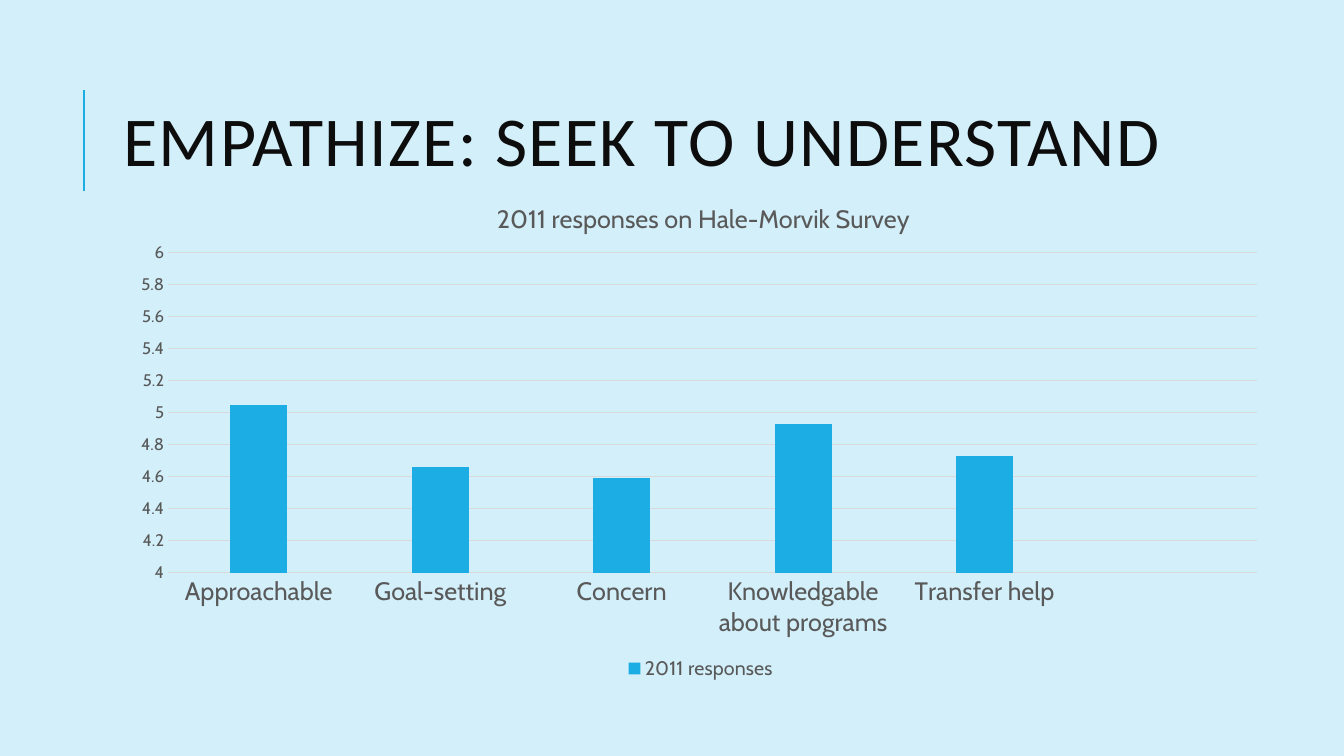
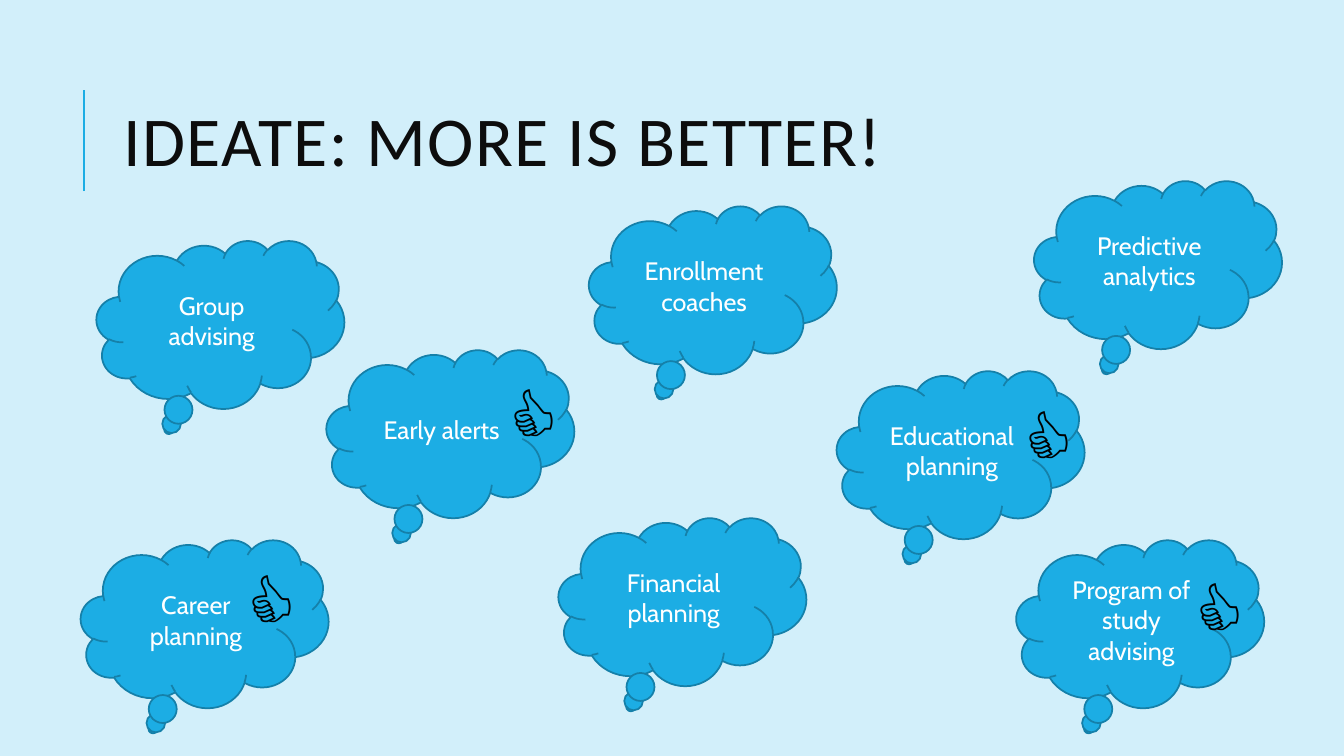
from lxml import etree
from pptx import Presentation
from pptx import util as u
from pptx.chart.data import CategoryChartData
from pptx.dml.color import RGBColor
from pptx.enum import chart as charts, shapes, text
from pptx.oxml import ns

PX = 9525
COLORS = {
    "background": "D2EFFA", "accent": "1CADE4", "outline": "1580A9",
    "title": "0D0D0D", "label": "595959", "grid": "D9D9D9",
    "white": "FFFFFF", "black": "000000",
}
TITLE_FONT, BODY_FONT, SYMBOL_FONT = "Calibri", "Cabin", "Arial"
TITLE_BOX = (108, 61, 1020, 157)
CHART_BOX = (116, 168, 1103, 484)
CLOUD_SIZE = (236, 160)
THUMB_SIZE = (68, 97)

SURVEY = {
    "title": "2011 responses on Hale-Morvik Survey",
    "series": "2011 responses",
    "values": [
        ("Approachable", 5.05),
        ("Goal-setting", 4.66),
        ("Concern", 4.59),
        ("Knowledgable about programs", 4.93),
        ("Transfer help", 4.73),
        ("", None),
    ],
}
# Idea, cloud corner, offset of the thumb from that corner
IDEAS = [
    ("Group advising", (92, 229), None),
    ("Early alerts", (311, 333), (164, 15)),
    ("Enrollment coaches", (561, 196), None),
    ("Educational planning", (797, 353), (168, 16)),
    ("Career planning", (77, 514), (148, 11)),
    ("Financial planning", (532, 493), None),
    ("Program of study advising", (968, 514), (160, 18)),
    ("Predictive analytics", (985, 172), None),
]


def px(*lengths):
    return [u.Emu(length * PX) for length in lengths]


def color(name):
    return RGBColor.from_string(COLORS[name])


def style_font(font, name, size, color_name):
    font.name, font.size, font.bold = name, u.Pt(size), False
    font.color.rgb = color(color_name)


def style_line(line, color_name, width):
    line.color.rgb = color(color_name)
    line.width = u.Pt(width)


def write(frame, words, font_name, size, color_name, align):
    frame.text = words
    paragraph = frame.paragraphs[0]
    paragraph.alignment = align
    style_font(paragraph.runs[0].font, font_name, size, color_name)
    return paragraph


def add_titled_slide(presentation, title):
    """Add a slide with the shared title style and its accent rule."""
    slide = presentation.slides.add_slide(presentation.slide_layouts[5])
    rule = slide.shapes.add_connector(
        shapes.MSO_CONNECTOR.STRAIGHT, *px(80, 182, 80, 86))
    style_line(rule.line, "accent", 1.5)
    etree.SubElement(rule._element.spPr, ns.qn("a:effectLst"))

    shape = slide.shapes.title
    shape.left, shape.top, shape.width, shape.height = px(*TITLE_BOX)
    frame = shape.text_frame
    frame.auto_size = text.MSO_AUTO_SIZE.NONE
    frame.vertical_anchor = text.MSO_ANCHOR.MIDDLE
    paragraph = write(frame, title, TITLE_FONT, 50, "title", text.PP_ALIGN.LEFT)
    paragraph.line_spacing = 0.8
    paragraph.runs[0].font._element.set("spc", "100")
    return slide


def set_layout(following, **fractions):
    """Put a manual chart layout just before the given element."""
    parent = following.getparent()
    for old in parent.findall(ns.qn("c:layout")):
        parent.remove(old)
    layout = etree.Element(ns.qn("c:layout"))
    manual = etree.SubElement(layout, ns.qn("c:manualLayout"))
    modes = {"xMode": "edge", "yMode": "edge"}
    if "w" in fractions:
        modes = {"layoutTarget": "inner", **modes}
    for tag, value in {**modes, **fractions}.items():
        etree.SubElement(manual, ns.qn("c:" + tag)).set("val", str(value))
    following.addprevious(layout)


def add_survey_chart(slide):
    data = CategoryChartData()
    data.categories = [name for name, _ in SURVEY["values"]]
    data.add_series(SURVEY["series"], [value for _, value in SURVEY["values"]])
    chart = slide.shapes.add_chart(
        charts.XL_CHART_TYPE.COLUMN_CLUSTERED, *px(*CHART_BOX), data).chart
    style_font(chart.font, BODY_FONT, 10, "black")

    chart.has_title = True
    write(chart.chart_title.text_frame, SURVEY["title"], BODY_FONT, 18,
          "label", text.PP_ALIGN.CENTER)
    set_layout(chart.element.xpath(".//c:title/c:overlay")[0], x=0.32, y=0.04)
    set_layout(chart.element.xpath(".//c:barChart")[0],
               x=0.04, y=0.15, w=0.94, h=0.63)

    chart.has_legend = True
    chart.legend.position = charts.XL_LEGEND_POSITION.BOTTOM
    chart.legend.include_in_layout = False
    style_font(chart.legend.font, BODY_FONT, 14, "label")

    plot = chart.plots[0]
    plot.vary_by_categories = False
    plot.gap_width, plot.overlap = 219, -27
    series = plot.series[0]
    series.format.fill.solid()
    series.format.fill.fore_color.rgb = color("accent")

    for axis, size in ((chart.category_axis, 18), (chart.value_axis, 12)):
        axis.major_tick_mark = axis.minor_tick_mark = charts.XL_TICK_MARK.NONE
        style_font(axis.tick_labels.font, BODY_FONT, size, "label")
    style_line(chart.category_axis.format.line, "grid", 0.75)
    values = chart.value_axis
    values.minimum_scale, values.maximum_scale, values.major_unit = 4, 6, 0.2
    values.format.line.fill.background()
    style_line(values.major_gridlines.format.line, "grid", 0.75)


def add_cloud(slide, idea, corner):
    cloud = slide.shapes.add_shape(
        shapes.MSO_SHAPE.CLOUD_CALLOUT, *px(*corner, *CLOUD_SIZE))
    cloud.shadow.inherit = False
    cloud.fill.solid()
    cloud.fill.fore_color.rgb = color("accent")
    style_line(cloud.line, "outline", 1.25)
    cloud.text_frame.vertical_anchor = text.MSO_ANCHOR.MIDDLE
    write(cloud.text_frame, idea, BODY_FONT, 18, "white", text.PP_ALIGN.CENTER)


def add_thumb(slide, corner):
    frame = slide.shapes.add_textbox(*px(*corner, *THUMB_SIZE)).text_frame
    frame.word_wrap = False
    frame.auto_size = text.MSO_AUTO_SIZE.SHAPE_TO_FIT_TEXT
    write(frame, "👍", SYMBOL_FONT, 54, "black", text.PP_ALIGN.CENTER)


def main():
    presentation = Presentation()
    presentation.slide_width, presentation.slide_height = px(1280, 720)
    background = presentation.slide_master.background.fill
    background.solid()
    background.fore_color.rgb = color("background")

    add_survey_chart(
        add_titled_slide(presentation, "EMPATHIZE: SEEK TO UNDERSTAND"))

    slide = add_titled_slide(presentation, "IDEATE: MORE IS BETTER!")
    for idea, corner, _ in IDEAS:
        add_cloud(slide, idea, corner)
    for _, (left, top), offset in IDEAS:
        if offset:
            add_thumb(slide, (left + offset[0], top + offset[1]))

    presentation.save("out.pptx")


if __name__ == "__main__":
    main()
